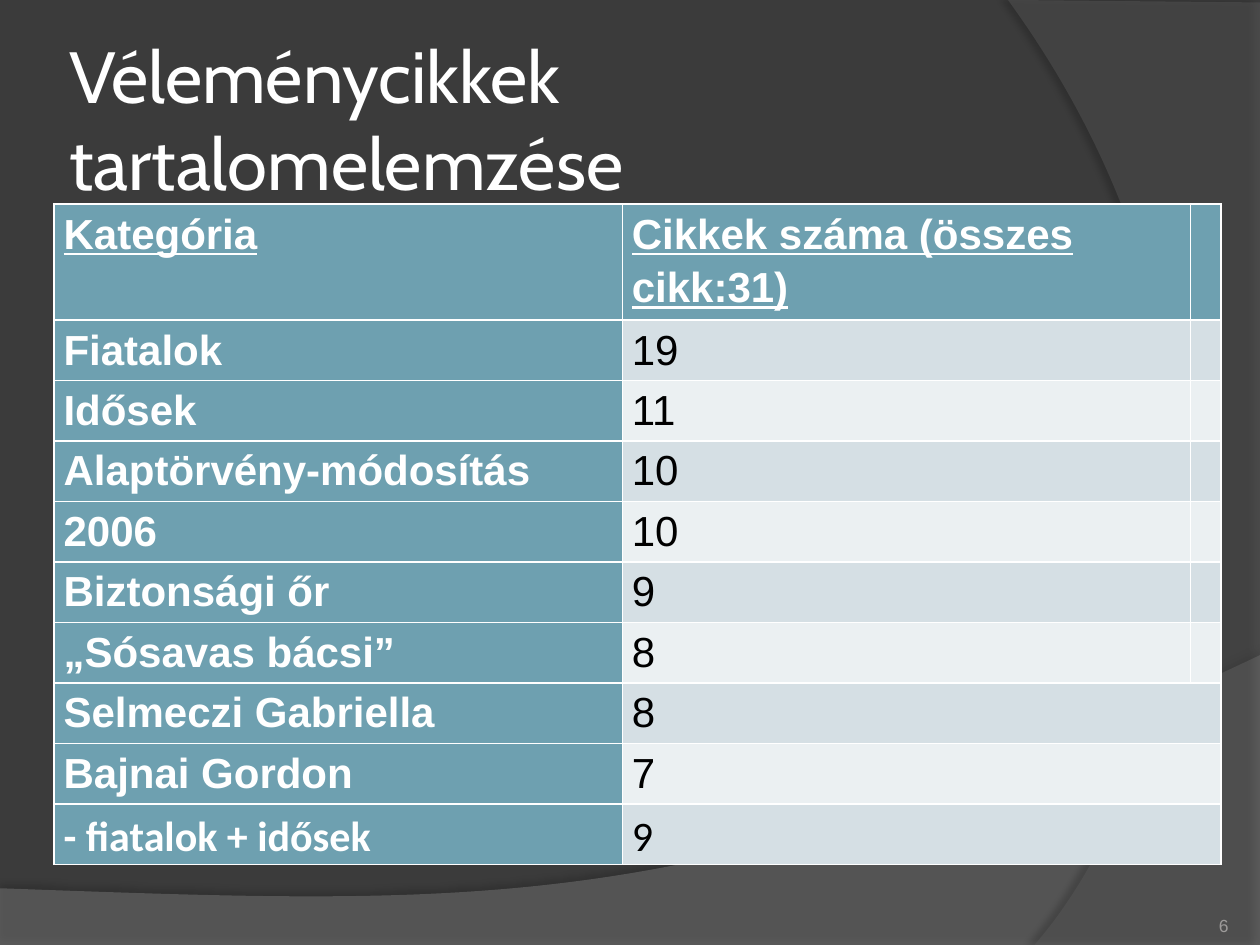
from dataclasses import dataclass

from lxml import etree
from pptx import Presentation
from pptx.dml.color import RGBColor
from pptx.enum.text import MSO_ANCHOR, PP_ALIGN
from pptx.oxml.ns import qn
from pptx.util import Inches, Pt

MIDDLE, BOTTOM = MSO_ANCHOR.MIDDLE, MSO_ANCHOR.BOTTOM
LEFT, RIGHT = PP_ALIGN.LEFT, PP_ALIGN.RIGHT


@dataclass(frozen=True)
class Theme:
    background: str = "3B3B3B"
    wave: str = "7F7F7F"
    arc: str = "5E5E5E"
    shadow: str = "000000"
    light: str = "FFFFFF"
    dark: str = "000000"
    accent: str = "6EA0B0"
    bands: tuple = ("D5DFE4", "EBF0F2")
    muted: str = "9D9B9A"
    title_font: str = "Cabin"
    body_font: str = "Arial"
    last_row_font: str = "Calibri"
    title_size: float = 41.4
    body_size: float = 24
    number_size: float = 10


THEME = Theme()


def add_span(para, text, font, size, color, bold=False, underline=False):
    span = para.add_run()
    span.text = text
    span.font.name, span.font.size = font, Pt(size)
    span.font.bold, span.font.underline = bold, underline
    span.font.color.rgb = RGBColor.from_string(color)


def curve_last_edge(shape, controls):
    """Turn the last straight edge of a freeform into a cubic Bézier curve."""
    edge = list(shape.element.iter(qn("a:lnTo")))[-1]
    curve = etree.Element(qn("a:cubicBezTo"))
    for x, y in controls:
        etree.SubElement(curve, qn("a:pt"), x=str(x), y=str(y))
    curve.append(edge[0])
    edge.getparent().replace(edge, curve)


deck = Presentation()
deck.slide_width, deck.slide_height = Inches(10), Inches(7.5)
WIDTH, HEIGHT = deck.slide_width, deck.slide_height
page = deck.slides.add_slide(deck.slide_layouts[6])
page.background.fill.solid()
page.background.fill.fore_color.rgb = RGBColor.from_string(THEME.background)

# Background sweeps, in hundredths of an inch: corners, then the control points of the last edge
wave = [(0, 705), (0, 750), (1000, 750), (1000, 520), (0, 705)]
arc = [(1000, 2), (1000, 750), (821, 750), (800, 0)]
for corners, controls, color, opacity, shade, distance, angle in (
    (wave, [(559, 729), (391, 719)], THEME.wave, 45, 35, 3.5, 270),
    (arc, [(935, 619), (1018, 300)], THEME.arc, 40, 45, 4, 180),
):
    builder = page.shapes.build_freeform(*corners[0], scale=Inches(0.01))
    builder.add_line_segments(corners[1:], close=True)
    sweep = builder.convert_to_shape()
    left, top = (min(values) for values in zip(*corners))
    curve_last_edge(sweep, [(x - left, y - top) for x, y in controls])
    sweep.shadow.inherit = False
    sweep.line.fill.background()
    sweep.fill.solid()
    sweep.fill.fore_color.rgb = RGBColor.from_string(color)
    properties = sweep.element.spPr
    fill_color = properties.find(qn("a:solidFill")).find(qn("a:srgbClr"))
    etree.SubElement(fill_color, qn("a:alpha"), val=str(opacity * 1000))
    shadow = etree.SubElement(
        properties.find(qn("a:effectLst")), qn("a:outerShdw"),
        blurRad=str(Pt(4)), dist=str(Pt(distance)), dir=str(angle * 60000),
        algn="ctr", rotWithShape="0")
    shadow_color = etree.SubElement(shadow, qn("a:srgbClr"), val=THEME.shadow)
    etree.SubElement(shadow_color, qn("a:alpha"), val=str(shade * 1000))

# Title and slide number, placed as shares of the slide
for text, (x, y, w, h), inset, anchor, align, font, size, color in (
    ("Véleménycikkek tartalomelemzése", (0.05, 0.04, 0.82, 0.17), 0.05,
     MIDDLE, LEFT, THEME.title_font, THEME.title_size, THEME.light),
    ("6", (0.89, 0.94, 0.085, 0.05), 0,
     BOTTOM, RIGHT, THEME.body_font, THEME.number_size, THEME.muted),
):
    box = page.shapes.add_textbox(int(WIDTH * x), int(HEIGHT * y),
                                  int(WIDTH * w), int(HEIGHT * h))
    frame = box.text_frame
    frame.word_wrap = True
    frame.vertical_anchor = anchor
    frame.margin_left = frame.margin_right = Inches(inset)
    frame.margin_top = frame.margin_bottom = Inches(inset)
    frame.paragraphs[0].alignment = align
    add_span(frame.paragraphs[0], text, font, size, color)

# Category table; the default table style supplies the white rules
ROWS = (
    ("Kategória", "Cikkek száma (összes cikk:31)"),
    ("Fiatalok", "19"),
    ("Idősek", "11"),
    ("Alaptörvény-módosítás", "10"),
    ("2006", "10"),
    ("Biztonsági őr", "9"),
    ("„Sósavas bácsi”", "8"),
    ("Selmeczi Gabriella", "8"),
    ("Bajnai Gordon", "7"),
    ("- fiatalok + idősek", "9"),
)
COLUMNS = (4.51, 4.51, 0.2)
ROW_HEIGHT = 0.48
FIRST_MERGED_ROW = 7
LAST_ROW = len(ROWS) - 1

table = page.shapes.add_table(
    len(ROWS), len(COLUMNS), Inches(0.43), Inches(1.62),
    Inches(sum(COLUMNS)), Inches(len(ROWS) * ROW_HEIGHT)).table
table.first_col = True
for column, width in zip(table.columns, COLUMNS):
    column.width = Inches(width)

for r, texts in enumerate(ROWS):
    table.rows[r].height = Inches(ROW_HEIGHT)
    if r >= FIRST_MERGED_ROW:
        table.cell(r, 1).merge(table.cell(r, 2))
    font = THEME.last_row_font if r == LAST_ROW else THEME.body_font
    for c in range(len(COLUMNS)):
        cell = table.cell(r, c)
        heading = r == 0 or c == 0
        cell.fill.solid()
        cell.fill.fore_color.rgb = RGBColor.from_string(
            THEME.accent if heading else THEME.bands[(r - 1) % 2])
        if c < len(texts):
            cell.margin_left = cell.margin_right = Pt(5.4)
            cell.margin_top = cell.margin_bottom = 0
            para = cell.text_frame.paragraphs[0]
            para.line_spacing = 1.15
            add_span(para, texts[c], font, THEME.body_size,
                     THEME.light if heading else THEME.dark,
                     bold=heading, underline=r == 0)

deck.save("out.pptx")
